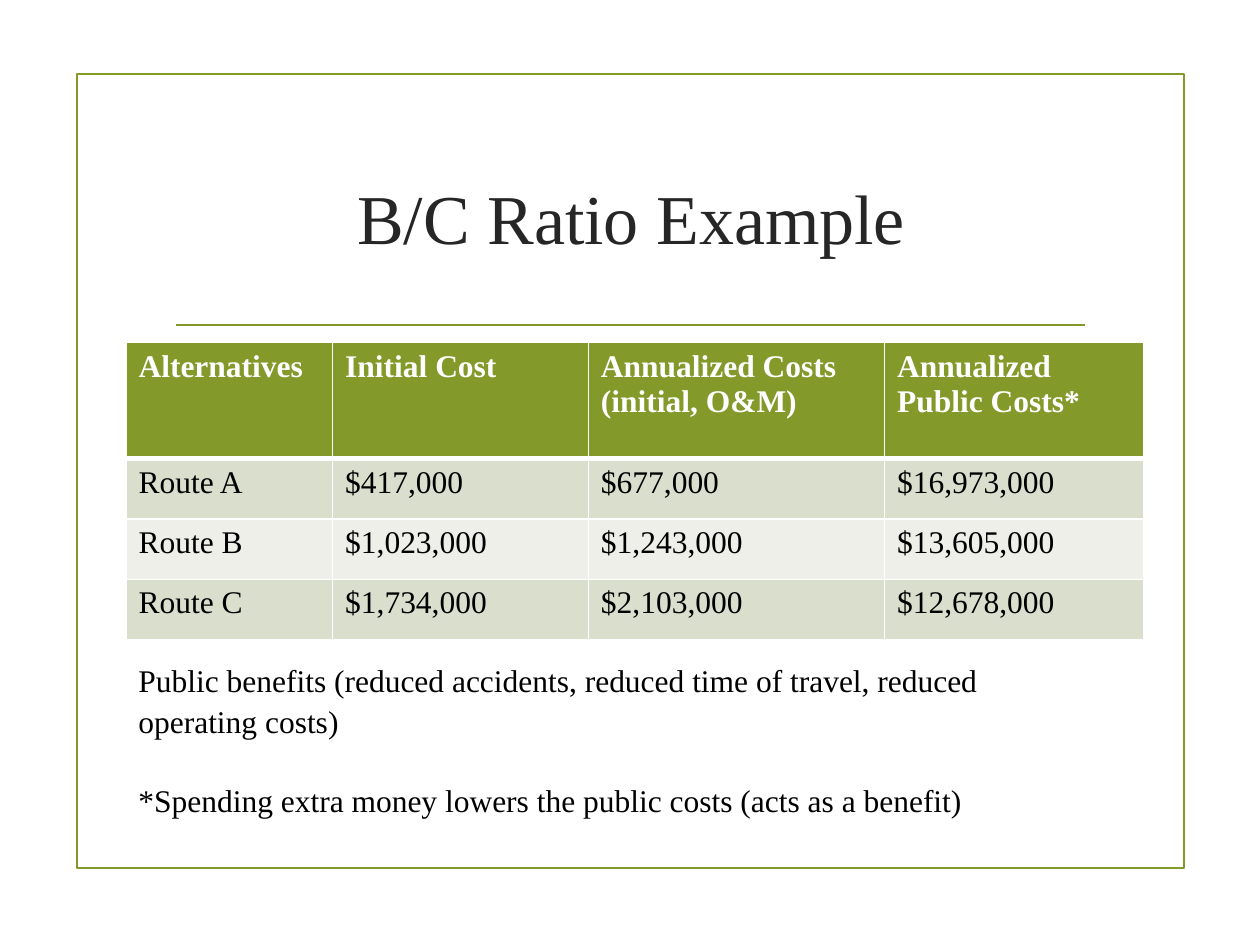
from dataclasses import dataclass

from lxml.etree import SubElement
from pptx import Presentation
from pptx.dml.color import RGBColor as RGB
from pptx.enum.shapes import MSO_CONNECTOR, MSO_SHAPE
from pptx.enum.text import MSO_ANCHOR, MSO_AUTO_SIZE, PP_ALIGN
from pptx.oxml.ns import qn
from pptx.util import Inches, Pt


@dataclass(frozen=True)
class Theme:
    """Colours, font and type sizes of the slide."""

    font: str = "Times New Roman"
    olive: RGB = RGB(0x83, 0x99, 0x2A)
    title: RGB = RGB(0x26, 0x26, 0x26)
    text: RGB = RGB(0, 0, 0)
    white: RGB = RGB(0xFF, 0xFF, 0xFF)
    bands: tuple = (RGB(0xD9, 0xDE, 0xCD), RGB(0xED, 0xEF, 0xE8))
    title_size: Pt = Pt(40)
    body_size: Pt = Pt(18)
    line_width: Pt = Pt(1.25)


THEME = Theme()
COLUMN_WIDTHS = (1.64, 2.03, 2.35, 2.06)
ROW_HEIGHTS = (0.92, 0.48, 0.48, 0.48)
ROUTE_COSTS = (
    ("Alternatives", "Initial Cost", "Annualized Costs (initial, O&M)", "Annualized Public Costs*"),
    ("Route A", "$417,000", "$677,000", "$16,973,000"),
    ("Route B", "$1,023,000", "$1,243,000", "$13,605,000"),
    ("Route C", "$1,734,000", "$2,103,000", "$12,678,000"),
)
NOTES = (
    "Public benefits (reduced accidents, reduced time of travel, reduced operating costs)",
    "*Spending extra money lowers the public costs (acts as a benefit)",
)


def style_font(paragraph, size, color, bold=False):
    """Set the font of a whole paragraph."""
    font = paragraph.font
    font.name, font.size, font.bold = THEME.font, size, bold
    font.color.rgb = color


def add_frame(slide, left, top, width, height):
    """Draw the outlined frame around the slide content."""
    frame = slide.shapes.add_shape(MSO_SHAPE.RECTANGLE, left, top, width, height)
    frame.shadow.inherit = False
    frame.fill.background()
    frame.line.color.rgb = THEME.olive
    frame.line.width = THEME.line_width


def add_rule(slide, left, top, width):
    """Draw the horizontal rule below the title."""
    rule = slide.shapes.add_connector(MSO_CONNECTOR.STRAIGHT, left, top, left + width, top)
    rule.line.color.rgb = THEME.olive
    rule.line.width = THEME.line_width
    SubElement(rule.element.spPr, qn("a:effectLst"))


def add_title(slide, left, top, width, height):
    """Place the centred slide title."""
    frame = slide.shapes.add_textbox(left, top, width, height).text_frame
    frame.word_wrap = True
    frame.vertical_anchor = MSO_ANCHOR.MIDDLE
    paragraph = frame.paragraphs[0]
    paragraph.text = "B/C Ratio Example"
    paragraph.alignment = PP_ALIGN.CENTER
    style_font(paragraph, THEME.title_size, THEME.title)


def set_borders(cell, bottom_width):
    """Give a cell thin white borders and a bottom one of the given width."""
    properties = cell._tc.get_or_add_tcPr()
    widths = (Pt(1), Pt(1), Pt(1), bottom_width)
    for position, (side, width) in enumerate(zip("LRTB", widths)):
        border = properties.makeelement(qn(f"a:ln{side}"), {"w": str(width)})
        fill = SubElement(border, qn("a:solidFill"))
        SubElement(fill, qn("a:srgbClr"), val=str(THEME.white))
        properties.insert(position, border)


def add_cost_table(slide, left, top, width, height):
    """Place the table that compares the costs of the routes."""
    table = slide.shapes.add_table(
        len(ROUTE_COSTS), len(COLUMN_WIDTHS), left, top, width, height
    ).table
    for column, column_width in zip(table.columns, COLUMN_WIDTHS):
        column.width = Inches(column_width)
    for row_index, (row, row_height) in enumerate(zip(table.rows, ROW_HEIGHTS)):
        row.height = Inches(row_height)
        header = row_index == 0
        for cell, text in zip(row.cells, ROUTE_COSTS[row_index]):
            cell.text = text
            cell.fill.solid()
            cell.fill.fore_color.rgb = THEME.olive if header else THEME.bands[(row_index - 1) % 2]
            set_borders(cell, Pt(3) if row_index < 2 and header else Pt(1))
            color = THEME.white if header else THEME.text
            style_font(cell.text_frame.paragraphs[0], THEME.body_size, color, header)


def add_notes(slide, left, top, width, height):
    """Place the remarks below the table."""
    frame = slide.shapes.add_textbox(left, top, width, height).text_frame
    frame.word_wrap = True
    frame.auto_size = MSO_AUTO_SIZE.SHAPE_TO_FIT_TEXT
    for index, text in enumerate(NOTES):
        paragraph = frame.add_paragraph() if index else frame.paragraphs[0]
        paragraph.text = text
        paragraph.line_spacing = 1.09
        if index:
            paragraph.space_before = Pt(21.7)
        style_font(paragraph, THEME.body_size, THEME.text)


def main():
    """Build and save the slide."""
    presentation = Presentation()
    presentation.slide_width, presentation.slide_height = Inches(10), Inches(7.5)
    slide = presentation.slides.add_slide(presentation.slide_layouts[6])
    add_frame(slide, Inches(0.61), Inches(0.59), Inches(8.79), Inches(6.3))
    add_rule(slide, Inches(1.4), Inches(2.58), Inches(7.21))
    add_title(slide, Inches(1.29), Inches(1), Inches(7.44), Inches(1.43))
    add_cost_table(
        slide, Inches(1), Inches(2.72), Inches(sum(COLUMN_WIDTHS)), Inches(sum(ROW_HEIGHTS))
    )
    add_notes(slide, Inches(1), Inches(5.17), Inches(7.72), Inches(1.62))
    presentation.save("out.pptx")


if __name__ == "__main__":
    main()
